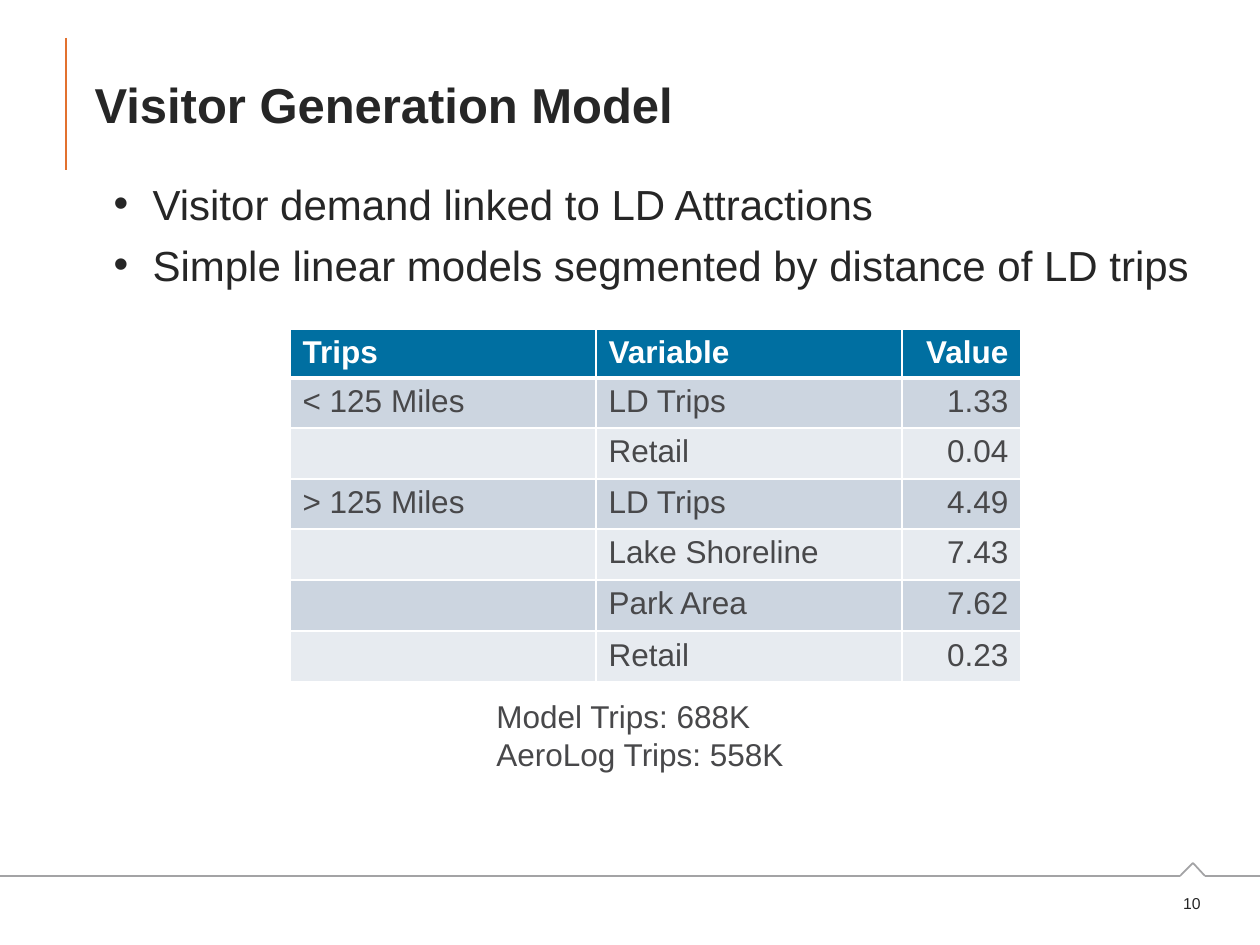
from lxml.etree import SubElement
from pptx import Presentation
from pptx.dml.color import RGBColor
from pptx.enum.shapes import MSO_CONNECTOR
from pptx.enum.text import MSO_ANCHOR, MSO_AUTO_SIZE, PP_ALIGN
from pptx.oxml.ns import qn
from pptx.util import Pt

PX = 914400 / 126  # EMU in one px
INK = RGBColor(0x26, 0x26, 0x26)
GREY = RGBColor(0x48, 0x48, 0x4A)
RULE = RGBColor(0xA3, 0xA3, 0xA5)
ORANGE = RGBColor(0xE2, 0x71, 0x2F)
BLUE = RGBColor(0x00, 0x6F, 0xA1)
DARK = RGBColor(0xCC, 0xD5, 0xE0)
LIGHT = RGBColor(0xE7, 0xEB, 0xF0)
WHITE = RGBColor(0xFF, 0xFF, 0xFF)


def write(para, text, size, color, bold=False):
    run = para.add_run()
    run.text = text
    font = run.font
    font.name, font.size, font.bold = "Arial", Pt(size), bold
    font.color.rgb = color


def px(*nums):
    return [round(n * PX) for n in nums]


deck = Presentation()
deck.slide_width, deck.slide_height = px(1260, 945)
slide = deck.slides.add_slide(deck.slide_layouts[1])
shapes = slide.shapes

# Title and bullets
title, body = slide.placeholders
title.left, title.top, title.width, title.height = px(82, 38, 1115, 132)
frame = title.text_frame
frame.vertical_anchor = MSO_ANCHOR.MIDDLE
frame.auto_size = MSO_AUTO_SIZE.NONE
frame.paragraphs[0].alignment = PP_ALIGN.LEFT
write(frame.paragraphs[0], "Visitor Generation Model", 28, INK, True)

body.left, body.top, body.width, body.height = px(53, 172, 1153, 667)
frame = body.text_frame
frame.auto_size = MSO_AUTO_SIZE.NONE
points = ["Visitor demand linked to LD Attractions",
          "Simple linear models segmented by distance of LD trips"]
for i, text in enumerate(points):
    para = frame.add_paragraph() if i else frame.paragraphs[0]
    props = para._p.get_or_add_pPr()
    left, indent = px(87, -39)
    props.set("marL", str(left))
    props.set("indent", str(indent))
    SubElement(props, qn("a:buFont")).set("typeface", "Arial")
    SubElement(props, qn("a:buChar")).set("char", "•")
    para.space_before = Pt(6 if i else 0)
    write(para, text, 24, INK)

# Title bar and footer rule with its peak
peak = [(0, 876), (1180, 876), (1193, 863), (1205, 876), (1260, 876)]
lines = [((66, 38), (66, 170), ORANGE, 1.5)]
lines += [(a, b, RULE, 1) for a, b in zip(peak, peak[1:])]
for start, end, color, width in lines:
    line = shapes.add_connector(MSO_CONNECTOR.STRAIGHT, *px(*start, *end))
    line.line.color.rgb = color
    line.line.width = Pt(width)
    SubElement(line._element.spPr, qn("a:effectLst"))

# Table of model values
rows = [("Trips", "Variable", "Value"),
        ("< 125 Miles", "LD Trips", "1.33"),
        ("", "Retail", "0.04"),
        ("> 125 Miles", "LD Trips", "4.49"),
        ("", "Lake Shoreline", "7.43"),
        ("", "Park Area", "7.62"),
        ("", "Retail", "0.23")]
heights = px(49, 50, 50, 50, 50, 49, 49)
widths = px(306, 306, 119)
table = shapes.add_table(len(rows), 3, *px(290, 329), sum(widths), sum(heights)).table
for col, width in zip(table.columns, widths):
    col.width = width
for r, row in enumerate(rows):
    table.rows[r].height = heights[r]
    for c, text in enumerate(row):
        cell = table.cell(r, c)
        para = cell.text_frame.paragraphs[0]
        if c == 2:
            para.alignment = PP_ALIGN.RIGHT
        if text:
            write(para, text, 18, GREY if r else WHITE, r == 0)
        # Borders come before the fill in the cell's XML
        props = cell._tc.get_or_add_tcPr()
        for side in "LRTB":
            thick = (r, side) in [(0, "B"), (1, "T")]
            edge = SubElement(props, qn("a:ln" + side), w=str(Pt(3 if thick else 1)))
            fill = SubElement(edge, qn("a:solidFill"))
            SubElement(fill, qn("a:srgbClr"), val=str(WHITE))
        cell.fill.solid()
        cell.fill.fore_color.rgb = BLUE if r == 0 else DARK if r % 2 else LIGHT

# Trip totals
frame = shapes.add_textbox(*px(484, 691, 345, 89)).text_frame
frame.word_wrap = True
write(frame.paragraphs[0], "Model Trips: 688K", 18, GREY)
write(frame.add_paragraph(), "AeroLog Trips: 558K", 18, GREY)

# Page number
frame = shapes.add_textbox(*px(1160, 888, 53, 31)).text_frame
frame.word_wrap = True
frame.vertical_anchor = MSO_ANCHOR.MIDDLE
frame.paragraphs[0].alignment = PP_ALIGN.RIGHT
write(frame.paragraphs[0], "10", 9, INK)

deck.save("out.pptx")
